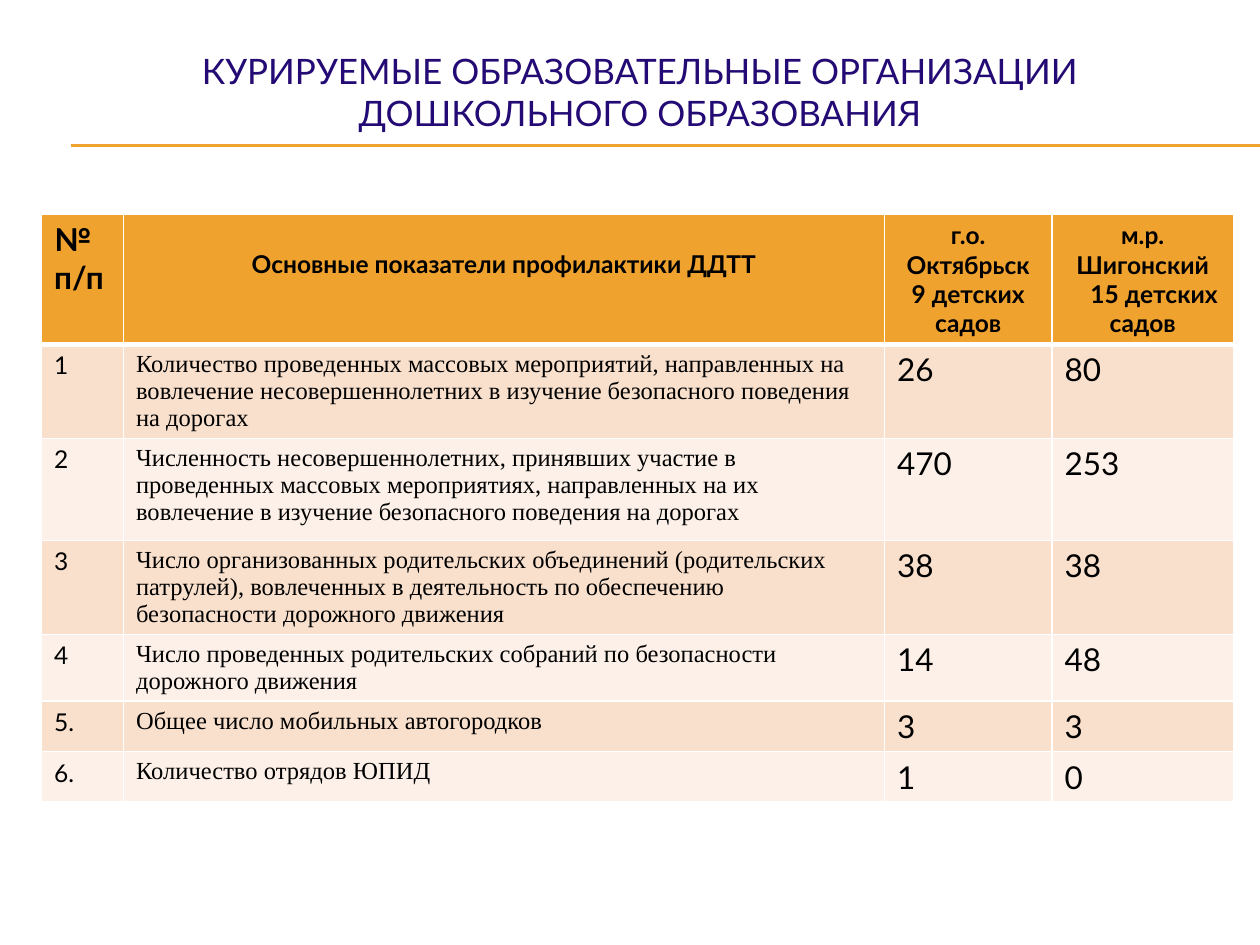
from lxml.etree import SubElement
from pptx import Presentation
from pptx.dml.color import RGBColor
from pptx.enum.shapes import MSO_CONNECTOR
from pptx.enum.text import MSO_ANCHOR, PP_ALIGN
from pptx.oxml.ns import qn
from pptx.util import Inches, Pt

NAVY = RGBColor(0x23, 0x0A, 0x74)
BLACK = RGBColor(0, 0, 0)
WHITE = RGBColor(0xFF, 0xFF, 0xFF)
ORANGE = RGBColor(0xF0, 0xA2, 0x2E)
PEACH = RGBColor(0xF9, 0xE0, 0xCD)
CREAM = RGBColor(0xFC, 0xF0, 0xE8)

TITLE = "КУРИРУЕМЫЕ ОБРАЗОВАТЕЛЬНЫЕ ОРГАНИЗАЦИИ\vДОШКОЛЬНОГО ОБРАЗОВАНИЯ"
HEADER = ["№\nп/п", "Основные показатели профилактики ДДТТ",
          "г.о. Октябрьск\n9 детских садов", "м.р. Шигонский\n15 детских садов"]
INDICATORS = [
    ("1", "Количество проведенных массовых мероприятий, направленных на вовлечение "
          "несовершеннолетних в изучение безопасного поведения на дорогах", "26", "80"),
    ("2", "Численность несовершеннолетних, принявших участие в проведенных массовых "
          "мероприятиях, направленных на их вовлечение в изучение безопасного "
          "поведения на дорогах", "470", "253"),
    ("3", "Число организованных родительских объединений (родительских патрулей), "
          "вовлеченных в деятельность по обеспечению безопасности дорожного движения",
     "38", "38"),
    ("4", "Число проведенных родительских собраний по безопасности дорожного движения",
     "14", "48"),
    ("5.", "Общее число мобильных автогородков", "3", "3"),
    ("6.", "Количество отрядов ЮПИД", "1", "0"),
]
COLUMN_WIDTHS = [6.5, 60.4, 13.3, 14.4]
ROW_HEIGHTS = [10.2, 7.4, 8.1, 7.4, 5.3, 4, 4]


class SlideBuilder:
    """Places elements on a grid of 100 columns by 75 rows."""
    heading_font = "Lato"
    body_font = "Times New Roman"
    small, large, title_size = Pt(14), Pt(18), Pt(20)

    def __init__(self, presentation):
        self.column = presentation.slide_width / 100
        self.row = presentation.slide_height / 75
        self.slide = presentation.slides.add_slide(presentation.slide_layouts[5])

    def box(self, left, top, width, height):
        return (int(left * self.column), int(top * self.row),
                int(width * self.column), int(height * self.row))

    def format_text(self, text_frame, size, color=BLACK, font=heading_font,
                    bold=False, align=PP_ALIGN.LEFT):
        for paragraph in text_frame.paragraphs:
            paragraph.alignment = align
            for run in paragraph.runs:
                run.font.name = font
                run.font.size = size
                run.font.bold = bold
                run.font.color.rgb = color

    def title(self, text, *area):
        shape = self.slide.shapes.title
        shape.left, shape.top, shape.width, shape.height = self.box(*area)
        shape.text_frame.text = text
        shape.text_frame.word_wrap = True
        shape.text_frame.vertical_anchor = MSO_ANCHOR.MIDDLE
        self.format_text(shape.text_frame, self.title_size, NAVY, align=PP_ALIGN.CENTER)

    def rule(self, left, right, top):
        x, y, width, _ = self.box(left, top, right - left, 0)
        line = self.slide.shapes.add_connector(MSO_CONNECTOR.STRAIGHT, x, y, x + width, y)
        line.line.color.rgb = ORANGE
        line.line.width = Pt(0.75)
        SubElement(line._element.spPr, qn("a:effectLst"))

    def cell_borders(self, cell, bottom):
        properties = cell._tc.get_or_add_tcPr()
        for side, points in (("L", 1), ("R", 1), ("T", 1), ("B", bottom)):
            border = SubElement(properties, qn(f"a:ln{side}"), w=str(Pt(points)))
            fill = SubElement(border, qn("a:solidFill"))
            SubElement(fill, qn("a:srgbClr"), val=str(WHITE))

    def cell(self, cell, text, fill, bottom=1, **style):
        self.cell_borders(cell, bottom)
        cell.fill.solid()
        cell.fill.fore_color.rgb = fill
        cell.text_frame.text = text
        self.format_text(cell.text_frame, **style)

    def table(self, left, top):
        area = self.box(left, top, sum(COLUMN_WIDTHS), sum(ROW_HEIGHTS))
        table = self.slide.shapes.add_table(
            len(ROW_HEIGHTS), len(COLUMN_WIDTHS), *area).table
        for column, width in zip(table.columns, COLUMN_WIDTHS):
            column.width = int(width * self.column)
        for row, height in zip(table.rows, ROW_HEIGHTS):
            row.height = int(height * self.row)

        for index, text in enumerate(HEADER):
            self.cell(table.cell(0, index), text, ORANGE, bottom=3, bold=True,
                      size=self.large if index == 0 else self.small,
                      align=PP_ALIGN.LEFT if index == 0 else PP_ALIGN.CENTER)
        table.cell(0, 1).margin_top = Inches(0.28)
        last_line = table.cell(0, 3).text_frame.paragraphs[1]
        last_line._p.get_or_add_pPr().set("indent", str(Inches(0.18)))

        for row, indicator in enumerate(INDICATORS, start=1):
            for index, text in enumerate(indicator):
                self.cell(table.cell(row, index), text, PEACH if row % 2 else CREAM,
                          size=self.small if index < 2 else self.large,
                          font=self.body_font if index == 1 else self.heading_font)


def main():
    presentation = Presentation()
    presentation.slide_width, presentation.slide_height = Inches(10), Inches(7.5)
    builder = SlideBuilder(presentation)
    for top in (11.5, 11.6):
        builder.rule(5.6, 100, top)
    builder.title(TITLE, 3.3, 2.9, 95, 8.7)
    builder.table(3.3, 17)
    presentation.save("out.pptx")


if __name__ == "__main__":
    main()
